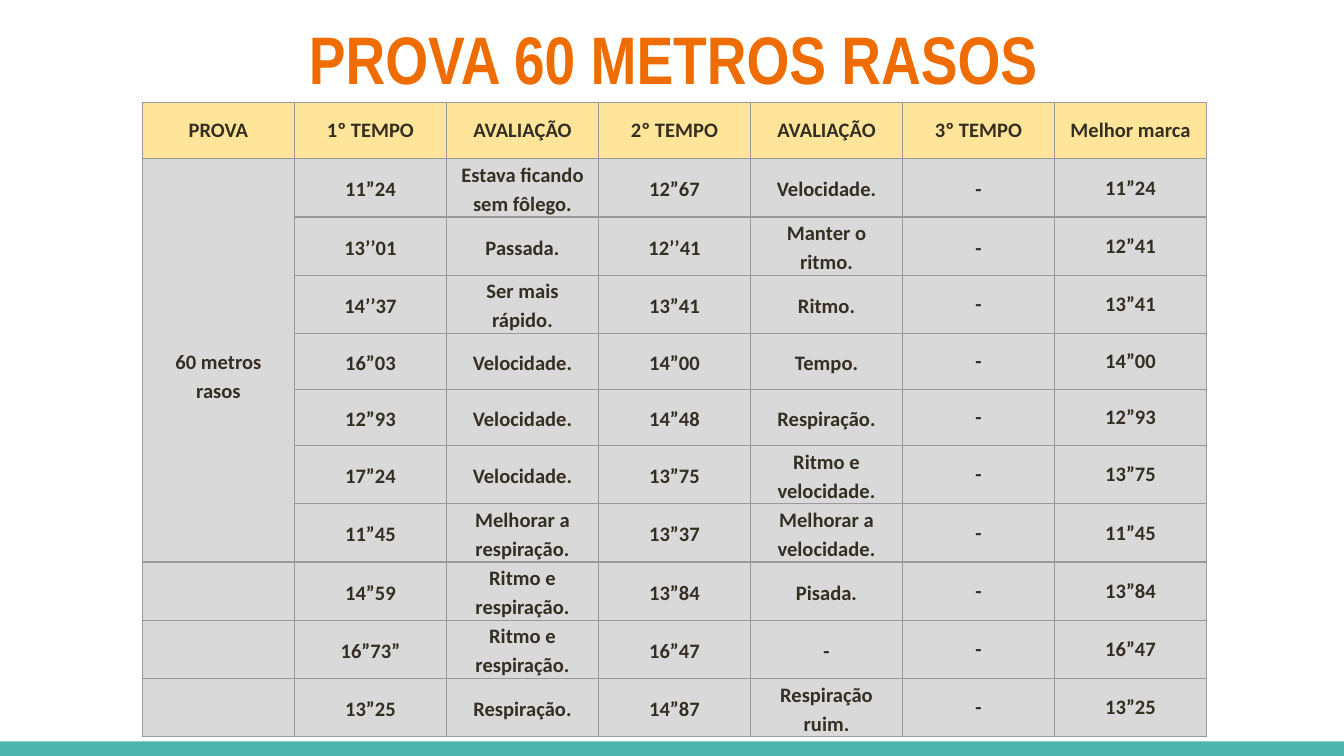
import pptx
import pptx.dml.color
import pptx.enum.shapes
import pptx.enum.text
import pptx.oxml
import pptx.oxml.ns
import pptx.util

Pt = pptx.util.Pt
ALIGN = pptx.enum.text.PP_ALIGN
ANCHOR = pptx.enum.text.MSO_ANCHOR

HEADS = ["PROVA", "1º TEMPO", "AVALIAÇÃO", "2º TEMPO", "AVALIAÇÃO", "3º TEMPO", "Melhor marca"]
EVENT = "60 metros rasos"
SPAN = 7  # data rows that the event name covers
# First time, remark, second time, remark, best mark
RUNS = [
    ("11”24", "Estava ficando sem fôlego.", "12”67", "Velocidade.", "11”24"),
    ("13’’01", "Passada.", "12’’41", "Manter o ritmo.", "12”41"),
    ("14’’37", "Ser mais rápido.", "13”41", "Ritmo.", "13”41"),
    ("16”03", "Velocidade.", "14”00", "Tempo.", "14”00"),
    ("12”93", "Velocidade.", "14”48", "Respiração.", "12”93"),
    ("17”24", "Velocidade.", "13”75", "Ritmo e velocidade.", "13”75"),
    ("11”45", "Melhorar a respiração.", "13”37", "Melhorar a velocidade.", "11”45"),
    ("14”59", "Ritmo e respiração.", "13”84", "Pisada.", "13”84"),
    ("16”73”", "Ritmo e respiração.", "16”47", "-", "16”47"),
    ("13”25", "Respiração.", "14”87", "Respiração ruim.", "13”25"),
]


def paint(fill, tone):
    fill.solid()
    fill.fore_color.rgb = pptx.dml.color.RGBColor.from_string(tone)


def style(para, face, size, tone):
    para.alignment = ALIGN.CENTER
    para.font.name = face
    para.font.size = Pt(size)
    para.font.bold = True
    paint(para.font.fill, tone)


def edge(cell, tone, width):
    """Draw the four borders; call before the cell is filled."""
    props = cell._tc.get_or_add_tcPr()
    for side in ("lnL", "lnR", "lnT", "lnB"):
        props.append(pptx.oxml.parse_xml(
            f'<a:{side} {pptx.oxml.ns.nsdecls("a")} w="{Pt(width)}">'
            f'<a:solidFill><a:srgbClr val="{tone}"/></a:solidFill></a:{side}>'))


def write(cell, text, tone, loose):
    """Fill and format one cell; loose text has wider line spacing."""
    edge(cell, "999999", 0.75)
    paint(cell.fill, tone)
    cell.vertical_anchor = ANCHOR.MIDDLE
    cell.margin_left = cell.margin_right = Pt(5.4)
    cell.margin_top = cell.margin_bottom = 0
    cell.text = text
    para = cell.text_frame.paragraphs[0]
    style(para, "Calibri", 11, "342E23")
    if loose:
        para.line_spacing = 1.15


def add_title(slide, text):
    title = slide.shapes.title
    title.left, title.top, title.width, title.height = Pt(25.2), Pt(2.2), Pt(671), Pt(45.4)
    frame = title.text_frame
    frame.auto_size = pptx.enum.text.MSO_AUTO_SIZE.NONE
    frame.vertical_anchor = ANCHOR.TOP
    frame.margin_left = frame.margin_right = Pt(7.2)
    frame.margin_top = frame.margin_bottom = Pt(7.2)
    frame.text = text
    style(frame.paragraphs[0], "Arial Narrow", 36, "EF6C00")


def add_bar(slide):
    bar = slide.shapes.add_shape(
        pptx.enum.shapes.MSO_SHAPE.RECTANGLE, 0, Pt(397.2), Pt(720), Pt(7.8))
    bar.shadow.inherit = False
    paint(bar.fill, "4DB6AC")
    bar.line.fill.background()


def add_times(slide):
    rows = [HEADS]
    for i, (first, note, second, hint, best) in enumerate(RUNS):
        rows.append([EVENT if i == 0 else "", first, note, second, hint, "-", best])
    wide, high = 81.45, 30
    table = slide.shapes.add_table(
        len(rows), len(HEADS), Pt(76.3), Pt(55.1),
        Pt(wide * len(HEADS)), Pt(high * len(rows))).table
    for col in table.columns:
        col.width = Pt(wide)
    for r, row in enumerate(rows):
        table.rows[r].height = Pt(high)
        for c, text in enumerate(row):
            loose = r > 0 and (c < 5 or c == 5 and r < 3)
            write(table.cell(r, c), text, "D9D9D9" if r else "FFE599", loose)
    event = table.cell(1, 0)
    event.merge(table.cell(SPAN, 0))
    event.margin_top = Pt(15.4)


def main():
    deck = pptx.Presentation()
    deck.slide_width, deck.slide_height = Pt(720), Pt(405)
    slide = deck.slides.add_slide(deck.slide_layouts[5])
    paint(slide.background.fill, "FFFFFF")
    add_bar(slide)
    add_times(slide)
    add_title(slide, "PROVA 60 METROS RASOS")
    deck.save("out.pptx")


if __name__ == "__main__":
    main()
